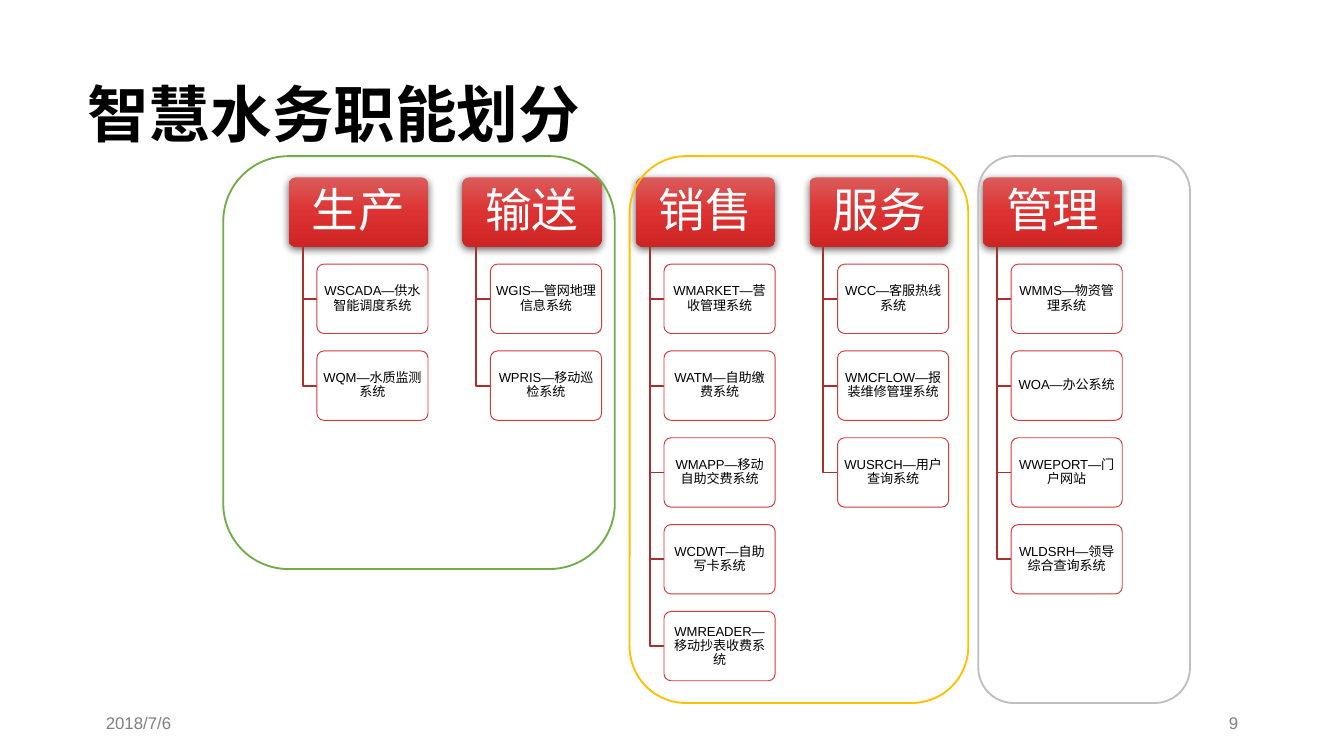
from copy import deepcopy
from dataclasses import dataclass

from lxml.etree import SubElement
from pptx import Presentation
from pptx.dml.color import RGBColor
from pptx.enum.shapes import MSO_SHAPE
from pptx.enum.text import MSO_ANCHOR, PP_ALIGN
from pptx.oxml.ns import qn
from pptx.util import Cm, Pt

COLORS = {
    "text": "000000", "muted": "808080", "white": "FFFFFF",
    "link": "AB2E2E", "border": "D53A3A", "shadow": "000000",
    "head_top": "DB5B5B", "head_mid": "DD3232", "head_end": "CD2424",
    "green": "70AD47", "amber": "FFC000", "gray": "BFBFBF",
}
LEFT, TOP = 5.46, 3.35
COL_STEP, ROW_STEP = 3.28, 1.64
HEAD_W, NODE_W, BOX_H = 2.63, 2.1, 1.31
LINK_DX, NODE_DX = 0.26, 0.53


@dataclass
class Function:
    name: str
    systems: list[str]


@dataclass
class Frame:
    left: float
    width: float
    height: float
    color: str


@dataclass
class Label:
    text: str
    left: float
    top: float
    width: float
    height: float
    size: float
    color: str
    align: PP_ALIGN = PP_ALIGN.LEFT
    bold: bool = False


FUNCTIONS = [
    Function("生产", ["WSCADA—供水智能调度系统", "WQM—水质监测系统"]),
    Function("输送", ["WGIS—管网地理信息系统", "WPRIS—移动巡检系统"]),
    Function("销售", ["WMARKET—营收管理系统", "WATM—自助缴费系统",
                    "WMAPP—移动自助交费系统", "WCDWT—自助写卡系统",
                    "WMREADER—移动抄表收费系统"]),
    Function("服务", ["WCC—客服热线系统", "WMCFLOW—报装维修管理系统",
                    "WUSRCH—用户查询系统"]),
    Function("管理", ["WMMS—物资管理系统", "WOA—办公系统",
                    "WWEPORT—门户网站", "WLDSRH—领导综合查询系统"]),
]
FRAMES = [
    Frame(4.22, 7.4, 7.8, "green"),
    Frame(11.9, 6.4, 10.33, "amber"),
    Frame(18.49, 4, 10.33, "gray"),
]
LABELS = [
    Label("智慧水务职能划分", 1.4, 0.6, 21.9, 2.78, 33, "text", bold=True),
    Label("2018/7/6", 1.75, 13.24, 5.72, 0.76, 9, "muted"),
    Label("9", 17.93, 13.24, 5.72, 0.76, 9, "muted", PP_ALIGN.RIGHT),
]


def rgb(name: str) -> RGBColor:
    return RGBColor.from_string(COLORS[name])


def set_text(sp, text: str, size: float, color: str, align: PP_ALIGN,
             spacing: float, margins: tuple[float, float], bold: bool = False):
    tf = sp.text_frame
    tf.word_wrap = True
    tf.vertical_anchor = MSO_ANCHOR.MIDDLE
    tf.margin_left = tf.margin_right = Cm(margins[0])
    tf.margin_top = tf.margin_bottom = Cm(margins[1])
    p = tf.paragraphs[0]
    p.text = text
    p.alignment = align
    p.line_spacing = spacing
    p.font.name = "Arial"
    p.font.size = Pt(size)
    p.font.bold = bold
    p.font.color.rgb = rgb(color)
    return p


def add_label(s, label: Label) -> None:
    sp = s.shapes.add_textbox(Cm(label.left), Cm(label.top),
                              Cm(label.width), Cm(label.height))
    set_text(sp, label.text, label.size, label.color, label.align, 1.2,
             (0.25, 0.13), label.bold)


def add_round_box(s, left: float, top: float, width: float, height: float):
    sp = s.shapes.add_shape(MSO_SHAPE.ROUNDED_RECTANGLE, Cm(left), Cm(top),
                            Cm(width), Cm(height))
    sp.shadow.inherit = False
    return sp


def set_line(sp, color: str, width: float) -> None:
    sp.line.color.rgb = rgb(color)
    sp.line.width = Pt(width)


def fill_head(sp) -> None:
    sp.fill.gradient()
    sp.fill.gradient_angle = 270
    stops = sp._element.spPr.find(f".//{qn('a:gsLst')}")
    stops.insert(1, deepcopy(stops[0]))
    for stop, position, color in zip(sp.fill.gradient_stops, (0, 0.5, 1),
                                     ("head_top", "head_mid", "head_end")):
        stop.position = position
        stop.color.rgb = rgb(color)
    sp.line.fill.background()


def add_shadow(sp) -> None:
    effects = sp._element.spPr.find(qn("a:effectLst"))
    shadow = SubElement(effects, qn("a:outerShdw"), blurRad=str(Pt(4.5)),
                        dist=str(Pt(1.5)), dir="5400000", algn="ctr",
                        rotWithShape="0")
    color = SubElement(shadow, qn("a:srgbClr"), val=COLORS["shadow"])
    SubElement(color, qn("a:alpha"), val="63000")


def add_head(s, name: str, left: float) -> None:
    sp = add_round_box(s, left, TOP, HEAD_W, BOX_H)
    sp.adjustments[0] = 0.1
    fill_head(sp)
    add_shadow(sp)
    p = set_text(sp, name, 25, "white", PP_ALIGN.CENTER, 0.9, (0.16, 0.12))
    p.space_after = Pt(8.75)


def add_link(s, left: float, top: float, right: float, bottom: float) -> None:
    builder = s.shapes.build_freeform(Cm(left), Cm(top))
    builder.add_line_segments([(Cm(left), Cm(bottom)),
                               (Cm(right), Cm(bottom))], close=False)
    sp = builder.convert_to_shape()
    sp.shadow.inherit = False
    sp.fill.background()
    set_line(sp, "link", 1)


def add_node(s, text: str, left: float, top: float) -> None:
    sp = add_round_box(s, left, top, NODE_W, BOX_H)
    sp.adjustments[0] = 0.1
    sp.fill.solid()
    sp.fill.fore_color.rgb = rgb("white")
    fill_color = sp._element.spPr.find(f"{qn('a:solidFill')}/{qn('a:srgbClr')}")
    SubElement(fill_color, qn("a:alpha"), val="90000")
    set_line(sp, "border", 0.5)
    p = set_text(sp, text, 7, "text", PP_ALIGN.CENTER, 0.9, (0.06, 0.06))
    p.space_after = Pt(2.45)


def add_function(s, function: Function, left: float) -> None:
    add_head(s, function.name, left)
    for row, system in enumerate(function.systems, start=1):
        top = TOP + row * ROW_STEP
        add_link(s, left + LINK_DX, TOP + BOX_H, left + NODE_DX, top + BOX_H / 2)
        add_node(s, system, left + NODE_DX, top)


def add_frame(s, frame: Frame) -> None:
    sp = add_round_box(s, frame.left, 2.95, frame.width, frame.height)
    sp.fill.background()
    set_line(sp, frame.color, 1)


def main() -> None:
    prs = Presentation()
    prs.slide_width, prs.slide_height = Cm(25.4), Cm(14.28)
    s = prs.slides.add_slide(prs.slide_layouts[6])
    for label in LABELS:
        add_label(s, label)
    for column, function in enumerate(FUNCTIONS):
        add_function(s, function, LEFT + column * COL_STEP)
    for frame in FRAMES:
        add_frame(s, frame)
    prs.save("out.pptx")


if __name__ == "__main__":
    main()
